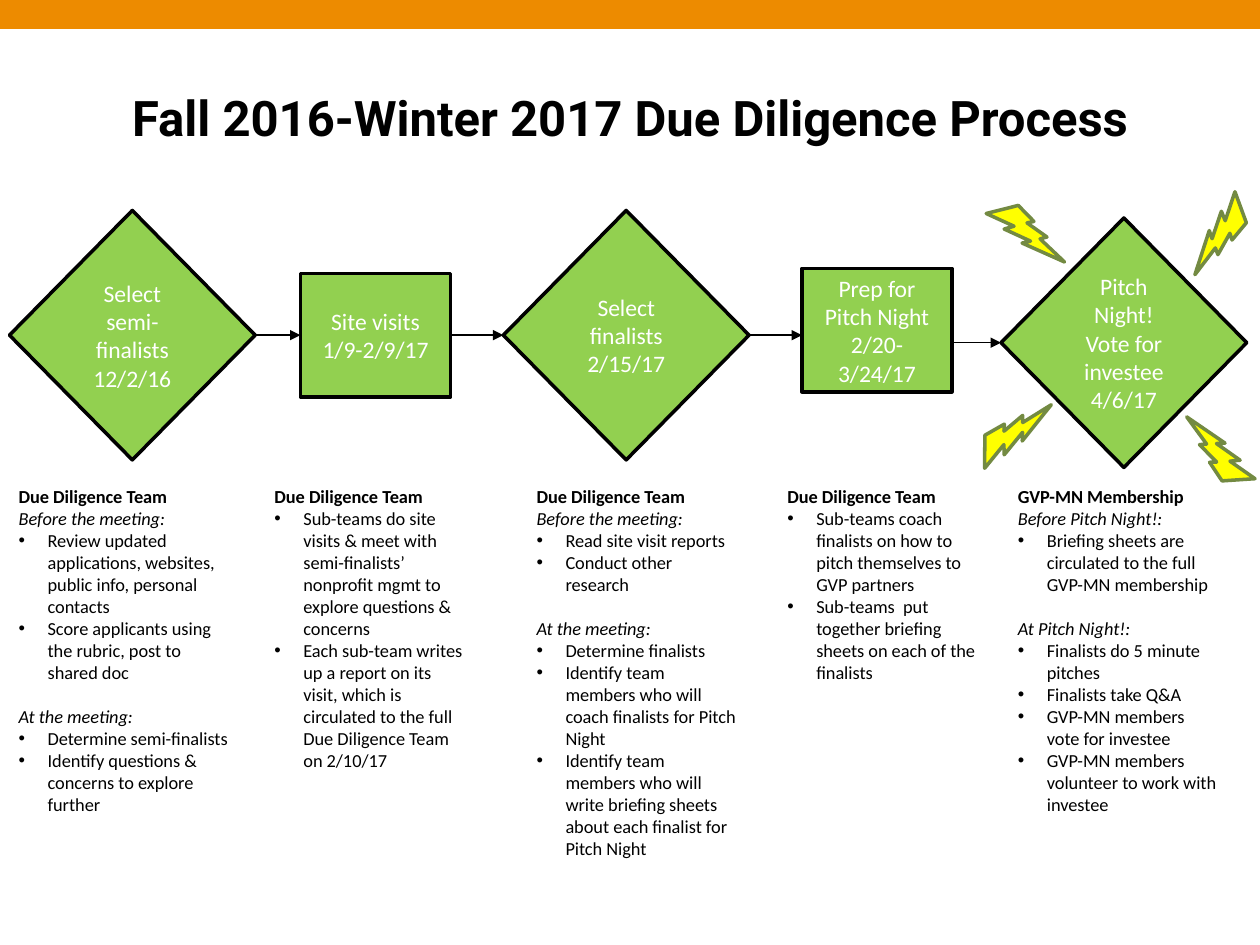
from itertools import pairwise

from lxml import etree
from pptx import Presentation
from pptx import util as u
from pptx.dml.color import RGBColor
from pptx.enum import shapes, text
from pptx.oxml.ns import qn

COLORS = {"band": "ED8B00", "step": "92D050", "ink": "000000", "light": "FFFFFF",
          "bolt": "FFFF00", "bolt_edge": "738A42"}
WIDTH, HEIGHT = u.Inches(10), u.Inches(7.5)
COLUMN, ROW = WIDTH / 10, HEIGHT / 7.5
KINDS = {"diamond": (shapes.MSO_SHAPE.DIAMOND, 1.95, 1.98),
         "box": (shapes.MSO_SHAPE.RECTANGLE, 1.19, 0.98)}
STEPS = [("diamond", 1.05, 2.66, ["Select semi-finalists", "12/2/16"]),
         ("box", 2.98, 2.66, ["Site visits", "1/9-2/9/17"]),
         ("diamond", 4.97, 2.66, ["Select finalists", "2/15/17"]),
         ("box", 6.96, 2.62, ["Prep for", "Pitch Night", "2/20-3/24/17"]),
         ("diamond", 8.92, 2.72, ["Pitch Night!", "Vote for investee", "4/6/17"])]
ARROW_ROWS = [2.66, 2.66, 2.66, 2.72]
BOLTS = [(0.89, 0.06, 86.9), (0.89, 0.94, 193.3), (0.05, 0.87, 287.5), (0.1, 0.06, 2.9)]
NOTES = [
    ((0.05, 3.8, 1.9, 2.93), "Due Diligence Team", [
        ("Before the meeting:", [
            "Review updated applications, websites, public info, personal contacts",
            "Score applicants using the rubric, post to shared doc"]),
        ("At the meeting:", [
            "Determine semi-finalists",
            "Identify questions & concerns to explore further"])]),
    ((2.08, 3.8, 1.7, 2.4), "Due Diligence Team", [
        (None, [
            "Sub-teams do site visits & meet with semi-finalists’ nonprofit mgmt "
            "to explore questions & concerns",
            "Each sub-team writes up a report on its visit, which is circulated "
            "to the full Due Diligence Team on 2/10/17"])]),
    ((4.16, 3.8, 1.79, 3.11), "Due Diligence Team", [
        ("Before the meeting:", ["Read site visit reports", "Conduct other research"]),
        ("At the meeting:", [
            "Determine finalists",
            "Identify team members who will coach finalists for Pitch Night",
            "Identify team members who will write briefing sheets about each "
            "finalist for Pitch Night"])]),
    ((6.15, 3.8, 1.79, 1.69), "Due Diligence Team", [
        (None, [
            "Sub-teams coach finalists on how to pitch themselves to GVP partners",
            "Sub-teams  put together briefing sheets on each of the finalists"])]),
    ((7.98, 3.8, 1.79, 2.75), "GVP-MN Membership", [
        ("Before Pitch Night!:", [
            "Briefing sheets are circulated to the full GVP-MN membership"]),
        ("At Pitch Night!:", [
            "Finalists do 5 minute pitches",
            "Finalists take Q&A",
            "GVP-MN members vote for investee",
            "GVP-MN members volunteer to work with investee"])]),
]


def color(name):
    """Look up a colour by its role."""
    return RGBColor.from_string(COLORS[name])


def to_grid(left, top, width, height):
    """Turn columns and rows into slide lengths."""
    return [round(n) for n in (left * COLUMN, top * ROW, width * COLUMN, height * ROW)]


def add_paragraph(frame, words, size, ink, font="Calibri", bold=False, italic=False):
    """Fill the empty first paragraph of a frame or append one."""
    paragraph = frame.paragraphs[0]
    if paragraph.runs:
        paragraph = frame.add_paragraph()
    paragraph.add_run().text = words
    paragraph.font.name, paragraph.font.size = font, u.Pt(size)
    paragraph.font.bold, paragraph.font.italic = bold, italic
    paragraph.font.color.rgb = color(ink)
    return paragraph


def add_filled(slide, kind, box, fill, edge=None):
    """Add a flat preset shape with an optional outline."""
    shape = slide.shapes.add_shape(kind, *to_grid(*box))
    shape.shadow.inherit = False
    shape.fill.solid()
    shape.fill.fore_color.rgb = color(fill)
    if edge:
        shape.line.color.rgb = color(edge)
        shape.line.width = u.Pt(2)
    else:
        shape.line.fill.background()
    return shape


def add_title(slide, box):
    """Place and format the slide title."""
    title = slide.shapes.title
    title.left, title.top, title.width, title.height = to_grid(*box)
    frame = title.text_frame
    frame.word_wrap = True
    frame.auto_size = text.MSO_AUTO_SIZE.NONE
    frame.vertical_anchor = text.MSO_ANCHOR.MIDDLE
    paragraph = add_paragraph(frame, "Fall 2016-Winter 2017 Due Diligence Process",
                              28, "ink", "Roboto", bold=True)
    paragraph.alignment = text.PP_ALIGN.CENTER


def add_step(slide, kind, center, middle, lines):
    """Draw one step around its centre and return its box."""
    preset, width, height = KINDS[kind]
    box = (center - width / 2, middle - height / 2, width, height)
    shape = add_filled(slide, preset, box, "step", "ink")
    shape.text_frame.vertical_anchor = text.MSO_ANCHOR.MIDDLE
    for line in lines:
        paragraph = add_paragraph(shape.text_frame, line, 13.5, "light")
        paragraph.alignment = text.PP_ALIGN.CENTER
    return box


def add_arrow(slide, start, end, row):
    """Draw a level arrow between two columns."""
    x1, y, x2, _ = to_grid(start, row, end, row)
    arrow = slide.shapes.add_connector(shapes.MSO_CONNECTOR.STRAIGHT, x1, y, x2, y)
    arrow.line.color.rgb = color("ink")
    arrow.line.width = u.Pt(0.75)
    etree.SubElement(arrow.line._get_or_add_ln(), qn("a:tailEnd"), type="triangle")
    etree.SubElement(arrow._element.spPr, qn("a:effectLst"))


def add_bolts(slide, box):
    """Set lightning bolts around the corners of a box."""
    left, top, width, height = box
    bolt_width, bolt_height = 0.64, 0.43
    for across, down, angle in BOLTS:
        place = (left + across * width - bolt_width / 2,
                 top + down * height - bolt_height / 2, bolt_width, bolt_height)
        bolt = add_filled(slide, shapes.MSO_SHAPE.LIGHTNING_BOLT, place, "bolt", "bolt_edge")
        bolt.rotation = angle


def add_bullet(paragraph):
    """Give a paragraph a hanging bullet."""
    properties = paragraph._p.get_or_add_pPr()
    indent = u.Inches(0.23)
    properties.set("marL", str(indent))
    properties.set("indent", str(-indent))
    bullet_font = etree.Element(qn("a:buFont"), typeface="Arial")
    bullet = etree.Element(qn("a:buChar"), char="•")
    properties.insert(0, bullet_font)
    properties.insert(1, bullet)


def add_notes(slide, box, heading, sections):
    """Write a heading and its bulleted sections into a box."""
    frame = slide.shapes.add_textbox(*to_grid(*box)).text_frame
    frame.word_wrap = True
    add_paragraph(frame, heading, 10.5, "ink", bold=True)
    for number, (label, items) in enumerate(sections):
        if label:
            paragraph = add_paragraph(frame, label, 10.5, "ink", italic=True)
            paragraph.space_before = u.Pt(12.6 if number else 0)
        for item in items:
            add_bullet(add_paragraph(frame, item, 10.5, "ink"))


def main():
    """Build and save the process slide."""
    presentation = Presentation()
    presentation.slide_width, presentation.slide_height = WIDTH, HEIGHT
    slide = presentation.slides.add_slide(presentation.slide_layouts[5])
    add_title(slide, (0.5, 0.3, 9, 1.25))
    boxes = [add_step(slide, *step) for step in STEPS]
    for note in NOTES:
        add_notes(slide, *note)
    for (box, following), row in zip(pairwise(boxes), ARROW_ROWS):
        add_arrow(slide, box[0] + box[2], following[0], row)
    add_bolts(slide, boxes[-1])
    add_filled(slide, shapes.MSO_SHAPE.RECTANGLE, (0, 0, 10, 0.23), "band")
    presentation.save("out.pptx")


if __name__ == "__main__":
    main()
